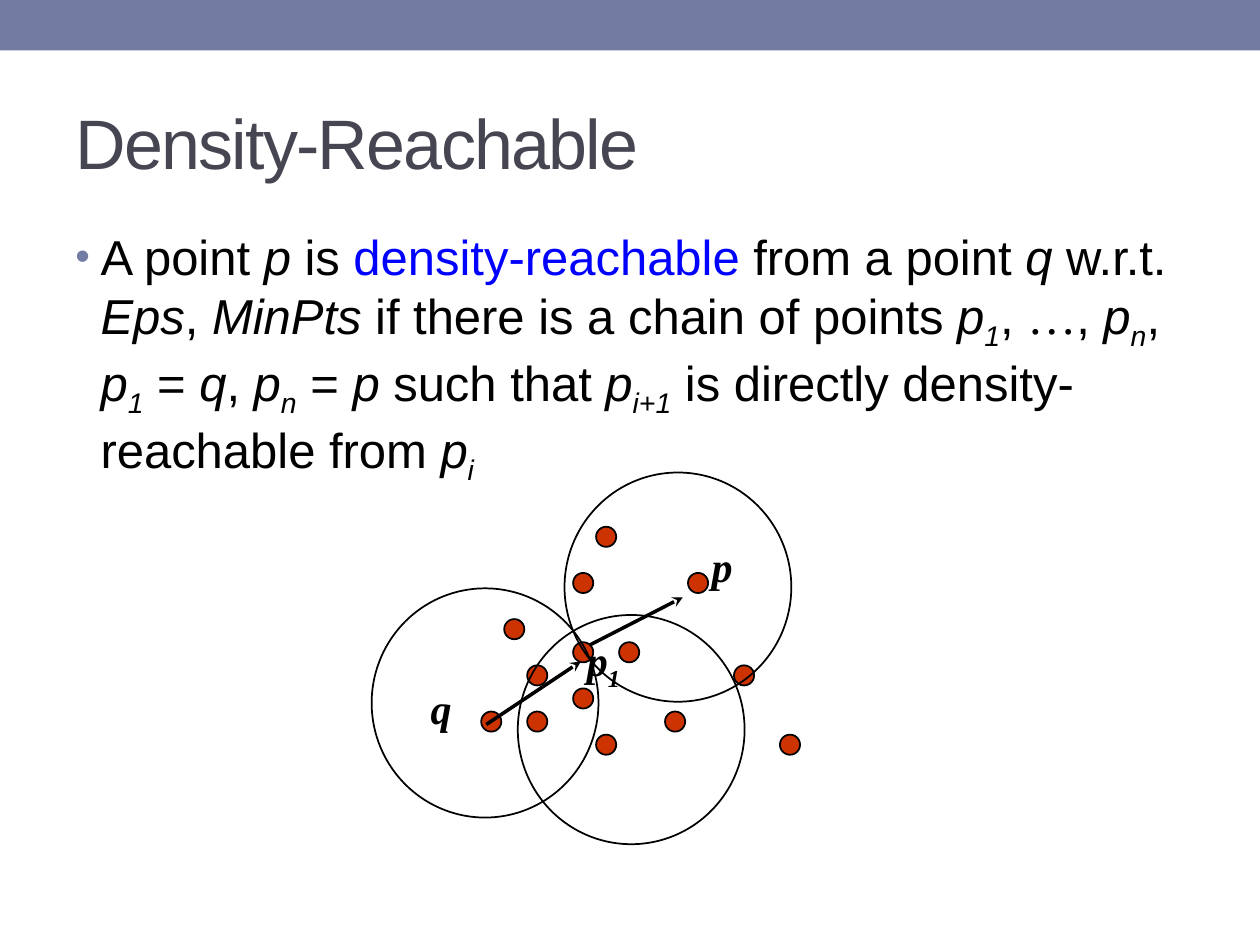
import pptx
import pptx.util
import pptx.dml.color
import pptx.enum.shapes
import pptx.enum.text
import pptx.oxml.ns
from lxml import etree

Pt = pptx.util.Pt
qn = pptx.oxml.ns.qn
SHAPE = pptx.enum.shapes.MSO_SHAPE
ANCHOR = pptx.enum.text.MSO_ANCHOR

COLORS = {"band": "727CA3", "title": "464653", "text": "000000",
          "term": "0000FF", "dot": "CC3300"}
SANS, SERIF = "Arial", "Times New Roman"

# Definition as (text, style): i italic, s italic subscript, t key term, e ellipsis
DEFINITION = [
    ("A point ", ""), ("p", "i"), (" is ", ""), ("density-reachable", "t"),
    (" from a point ", ""), ("q ", "i"), ("w.r.t. ", ""), ("Eps", "i"),
    (", ", ""), ("MinPts", "i"), (" if there is a chain of points ", ""),
    ("p", "i"), ("1", "s"), (", ", ""), ("…", "e"), (", ", ""),
    ("p", "i"), ("n", "s"), (", ", ""), ("p", "i"), ("1", "s"), (" = ", ""),
    ("q", "i"), (", ", ""), ("p", "i"), ("n", "s"), (" = ", ""), ("p", "i"),
    (" such that ", ""), ("p", "i"), ("i+1", "s"),
    (" is directly density-reachable from ", ""), ("p", "i"), ("i", "s"),
]

# Diagram parts, in points from the diagram's top left corner
NEIGHBOURHOODS = [(83.5, 81.4), (0, 66.2), (110.2, 0)]
NEIGHBOURHOOD_SIZE = (129.6, 131)
DOT_ORIGIN, DOT_PITCH, DOT_SIZE = (62.6, 31), (13.13, 13.2), (11.5, 11.5)
DOT_CELLS = [(1, 4), (4, 5), (4, 2), (0, 8), (2, 6), (2, 8), (5, 9),
             (5, 0), (11, 6), (9, 2), (4, 7), (6, 5), (8, 8), (13, 9)]
POINT_LABELS = [
    (187.2, 35.3, 44.6, [("p", "i")]),
    (26.6, 116.6, 44.6, [("q", "i")]),
    (115.9, 89.3, 71.3, [("p", "i"), ("1", "s")]),
]
ARROWS = [(124.6, 98.6, 177.8, 71.3), (65.5, 144, 119.5, 108)]


def rgb(name):
    return pptx.dml.color.RGBColor.from_string(COLORS[name])


def add_text(slide, box, runs, size, font, color="text", bold=False):
    textbox = slide.shapes.add_textbox(*map(Pt, box))
    textbox.text_frame.word_wrap = True
    paragraph = textbox.text_frame.paragraphs[0]
    for words, style in runs:
        run = paragraph.add_run()
        run.text = words
        run.font.size = Pt(size)
        run.font.name = SERIF if style == "e" else font
        run.font.bold = bold
        run.font.italic = style in ("i", "s")
        run.font.color.rgb = rgb("term" if style == "t" else color)
        if style == "s":
            run.font._element.set("baseline", "-25000")
    return textbox.text_frame


def add_ellipse(slide, left, top, size, fill=None):
    ellipse = slide.shapes.add_shape(SHAPE.OVAL, Pt(left), Pt(top), *map(Pt, size))
    ellipse.shadow.inherit = False
    if fill:
        ellipse.fill.solid()
        ellipse.fill.fore_color.rgb = rgb(fill)
    else:
        ellipse.fill.background()
    ellipse.line.color.rgb = rgb("text")
    ellipse.line.width = Pt(1)


def add_arrow(slide, start, end):
    arrow = slide.shapes.add_connector(
        pptx.enum.shapes.MSO_CONNECTOR.STRAIGHT, *map(Pt, start + end))
    arrow.line.color.rgb = rgb("text")
    arrow.line.width = Pt(2)
    etree.SubElement(arrow.line._get_or_add_ln(), qn("a:tailEnd"), type="stealth")
    etree.SubElement(arrow._element.spPr, qn("a:effectLst"))


def add_band(slide, box):
    band = slide.shapes.add_shape(SHAPE.RECTANGLE, *map(Pt, box))
    band.shadow.inherit = False
    band.fill.solid()
    band.fill.fore_color.rgb = rgb("band")
    band.line.fill.background()


def add_title(slide, box):
    title = add_text(slide, box, [("Density-Reachable", "")], 40, SANS, "title")
    title.vertical_anchor = ANCHOR.MIDDLE
    title.paragraphs[0].runs[0].font._element.set("spc", "-100")


def add_definition(slide, box):
    paragraph = add_text(slide, box, DEFINITION, 28, SANS).paragraphs[0]
    paragraph.space_before = Pt(3)
    # Hanging bullet
    properties = paragraph._p.get_or_add_pPr()
    properties.set("marL", str(Pt(14.4)))
    properties.set("indent", str(-Pt(14.4)))
    bullet_color = etree.SubElement(properties, qn("a:buClr"))
    etree.SubElement(bullet_color, qn("a:srgbClr"), val=COLORS["band"])
    etree.SubElement(properties, qn("a:buSzPct"), val="85000")
    etree.SubElement(properties, qn("a:buFont"), typeface=SANS)
    etree.SubElement(properties, qn("a:buChar"), char="•")


def add_diagram(slide, left, top):
    # Data points on a regular grid
    for column, row in DOT_CELLS:
        add_ellipse(slide, left + DOT_ORIGIN[0] + column * DOT_PITCH[0],
                    top + DOT_ORIGIN[1] + row * DOT_PITCH[1], DOT_SIZE, "dot")
    # Eps-neighbourhoods
    for x, y in NEIGHBOURHOODS:
        add_ellipse(slide, left + x, top + y, NEIGHBOURHOOD_SIZE)
    # Point names
    for x, y, width, runs in POINT_LABELS:
        label = add_text(slide, (left + x, top + y, width, 54), runs, 24, SERIF,
                         bold=True)
        label.paragraphs[0].space_before = Pt(3)
    # Chain from q through p1 to p
    for x1, y1, x2, y2 in ARROWS:
        add_arrow(slide, (left + x1, top + y1), (left + x2, top + y2))


def main():
    deck = pptx.Presentation()
    deck.slide_width, deck.slide_height = Pt(720), Pt(540)
    slide = deck.slides.add_slide(deck.slide_layouts[6])
    add_band(slide, (0, 0, 720, 28.8))
    add_title(slide, (36, 41.8, 648, 77.8))
    add_definition(slide, (36, 126, 648, 383.8))
    add_diagram(slide, 212.4, 270)
    deck.save("out.pptx")


if __name__ == "__main__":
    main()
